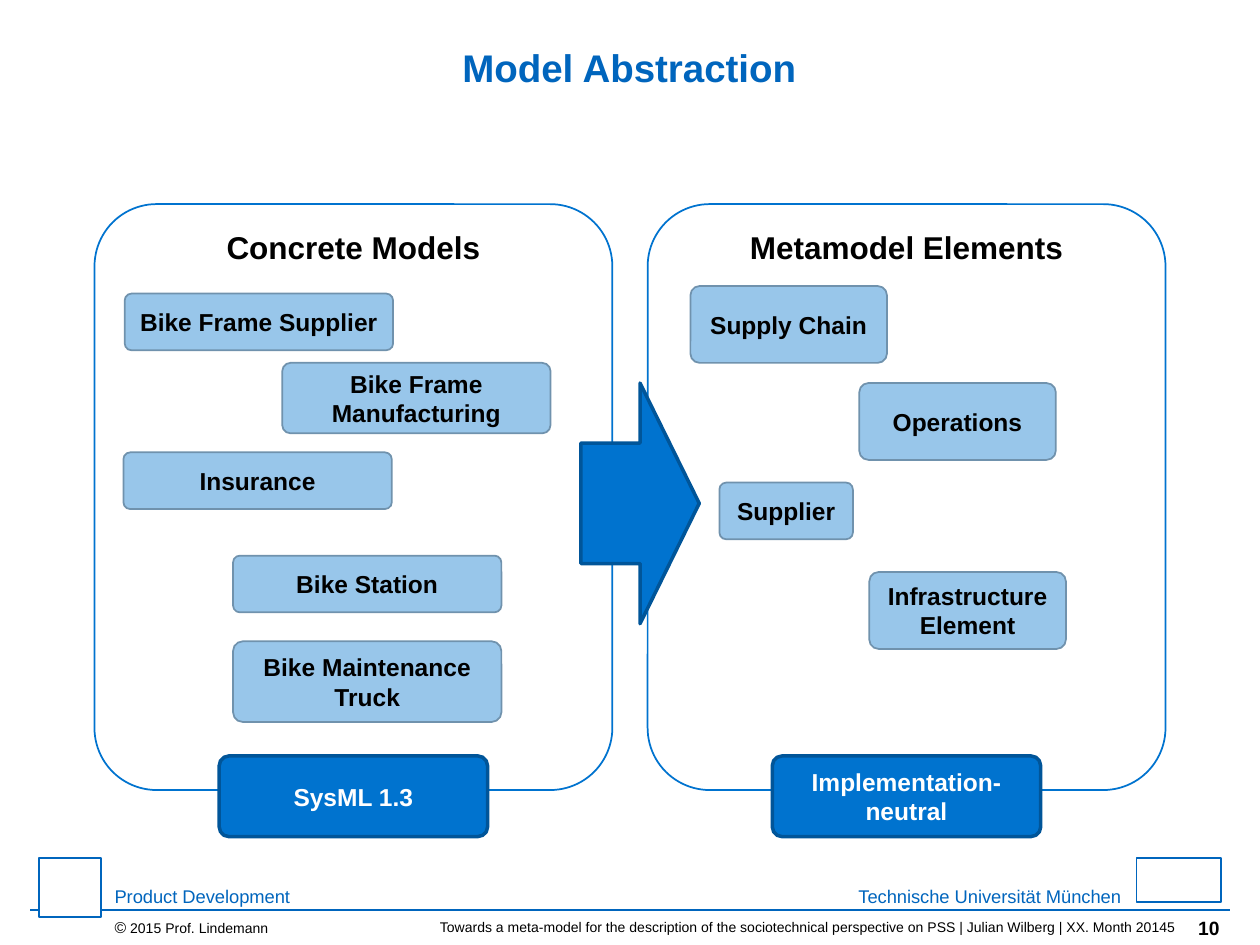
"""Build the Model Abstraction slide: concrete models leading to metamodel elements."""
from lxml.etree import SubElement
from pptx import Presentation
from pptx.dml.color import RGBColor
from pptx.enum.shapes import MSO_CONNECTOR, MSO_SHAPE
from pptx.enum.text import MSO_ANCHOR, PP_ALIGN
from pptx.oxml.ns import qn
from pptx.util import Inches, Pt

COLORS = {
    "white": "FFFFFF", "black": "000000", "brand": "0065BD", "blue": "0073CF",
    "navy": "005599", "sky": "98C6EA", "steel": "7092AD",
}
STYLES = {
    "panel": {"fill": "white", "line": "blue", "weight": 1, "size": 18, "color": "black", "anchor": MSO_ANCHOR.TOP},
    "element": {"fill": "sky", "line": "steel", "weight": 1, "size": 14, "color": "black", "anchor": MSO_ANCHOR.MIDDLE},
    "language": {"fill": "blue", "line": "navy", "weight": 2, "size": 14, "color": "white", "anchor": MSO_ANCHOR.MIDDLE},
    "arrow": {"fill": "blue", "line": "navy", "weight": 2},
    "emblem": {"fill": "white", "line": "brand", "weight": 1},
}


def write(frame, runs, color, bold, align, anchor, margin):
    """Fill a text frame with one paragraph of (text, size) runs."""
    sides = ("margin_left", "margin_top", "margin_right", "margin_bottom")
    frame_format = {"word_wrap": True, "vertical_anchor": anchor}
    if margin is not None:
        frame_format.update({side: Inches(margin) for side in sides})
    for key, value in frame_format.items():
        setattr(frame, key, value)
    paragraph = frame.paragraphs[0]
    paragraph.alignment = align
    for text, size in runs:
        run = paragraph.add_run()
        run.text = text
        for key, value in {"name": "Arial", "size": Pt(size), "bold": bold}.items():
            setattr(run.font, key, value)
        run.font.color.rgb = RGBColor.from_string(COLORS[color])


def draw(preset, box, style_name, label=None):
    """Add a filled and outlined shape, with a centred label if given."""
    style = STYLES[style_name]
    shape = slide.shapes.add_shape(preset, *map(Inches, box))
    shape.shadow.inherit = False
    shape.fill.solid()
    shape.fill.fore_color.rgb = RGBColor.from_string(COLORS[style["fill"]])
    shape.line.color.rgb = RGBColor.from_string(COLORS[style["line"]])
    shape.line.width = Pt(style["weight"])
    if preset == MSO_SHAPE.ROUNDED_RECTANGLE:
        shape.adjustments[0] = 0.12
    if label:
        write(shape.text_frame, [(label, style["size"])], style["color"], True,
              PP_ALIGN.CENTER, style["anchor"], None)


prs = Presentation()
prs.slide_width, prs.slide_height = Inches(10), Inches(7.5)
slide = prs.slides.add_slide(prs.slide_layouts[5])

rule = slide.shapes.add_connector(
    MSO_CONNECTOR.STRAIGHT, Inches(0.24), Inches(7.22), Inches(9.76), Inches(7.22))
rule.line.color.rgb = RGBColor.from_string(COLORS["brand"])
rule.line.width = Pt(1)
SubElement(rule._element.spPr, qn("a:effectLst"))

for emblem_box in ((0.31, 6.81, 0.49, 0.47), (9.02, 6.81, 0.67, 0.35)):
    draw(MSO_SHAPE.RECTANGLE, emblem_box, "emblem")

talk = ("Towards a meta-model for the description of the sociotechnical perspective on PSS"
        " | Julian Wilberg | XX. Month 20145")
footers = [
    ((2.8, 7.22, 6.54, 0.28), [(talk, 8)], "black", False, PP_ALIGN.RIGHT),
    ((0.91, 7.22, 3.15, 0.28), [("©", 9), (" 2015 Prof. Lindemann", 8)], "black", False, PP_ALIGN.LEFT),
    ((9.21, 7.22, 0.47, 0.28), [("10", 11)], "black", True, PP_ALIGN.RIGHT),
    ((0.91, 6.99, 2.36, 0.24), [("Product Development", 10.5)], "brand", False, PP_ALIGN.LEFT),
    ((6.54, 6.99, 2.36, 0.24), [("Technische Universität München", 10.5)], "brand", False, PP_ALIGN.RIGHT),
]
for box, runs, color, bold, align in footers:
    footer = slide.shapes.add_textbox(*map(Inches, box))
    write(footer.text_frame, runs, color, bold, align, MSO_ANCHOR.MIDDLE, 0)

title = slide.shapes.title
title_place = {"left": 0.39, "top": 0.31, "width": 9.21, "height": 0.55}
for key, value in title_place.items():
    setattr(title, key, Inches(value))
write(title.text_frame, [("Model Abstraction", 22)], "brand", True,
      PP_ALIGN.CENTER, MSO_ANCHOR.TOP, 0.04)

panels = [(0.75, "Concrete Models", "SysML 1.3"),
          (5.14, "Metamodel Elements", "Implementation-neutral")]
for left, heading, language in panels:
    draw(MSO_SHAPE.ROUNDED_RECTANGLE, (left, 1.62, 4.11, 4.65), "panel", heading)

elements = [
    ("Bike Frame Supplier", 0.99, 2.33, 2.13, 0.45),
    ("Bike Frame Manufacturing", 2.24, 2.88, 2.13, 0.56),
    ("Insurance", 0.98, 3.59, 2.13, 0.45),
    ("Bike Station", 1.85, 4.41, 2.13, 0.45),
    ("Bike Maintenance Truck", 1.85, 5.09, 2.13, 0.64),
    ("Supply Chain", 5.48, 2.27, 1.56, 0.61),
    ("Operations", 6.82, 3.04, 1.56, 0.61),
    ("Supplier", 5.71, 3.83, 1.06, 0.45),
    ("Infrastructure Element", 6.9, 4.54, 1.56, 0.61),
]
for label, *box in elements:
    draw(MSO_SHAPE.ROUNDED_RECTANGLE, box, "element", label)

draw(MSO_SHAPE.RIGHT_ARROW, (4.61, 3.04, 0.94, 1.91), "arrow")

for left, heading, language in panels:
    draw(MSO_SHAPE.ROUNDED_RECTANGLE, (left + 0.99, 6, 2.13, 0.64), "language", language)

prs.save("out.pptx")
